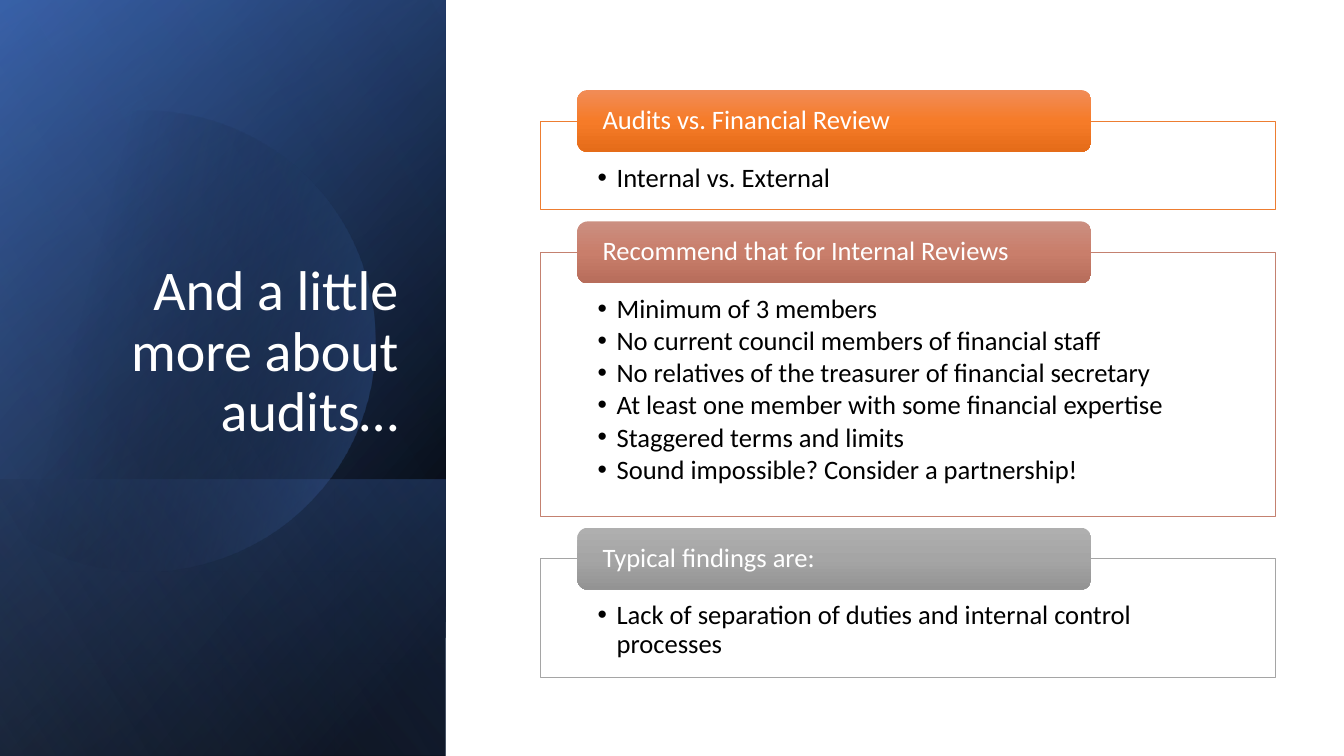
from lxml import etree
from pptx import Presentation
from pptx.dml.color import RGBColor
from pptx.enum.shapes import MSO_SHAPE
from pptx.enum.text import MSO_ANCHOR, MSO_AUTO_SIZE, PP_ALIGN
from pptx.oxml.ns import qn
from pptx.util import Cm, Pt

RECT, ROUND = MSO_SHAPE.RECTANGLE, MSO_SHAPE.ROUNDED_RECTANGLE
TOP, MIDDLE, BOTTOM = MSO_ANCHOR.TOP, MSO_ANCHOR.MIDDLE, MSO_ANCHOR.BOTTOM
LEFT, RIGHT = PP_ALIGN.LEFT, PP_ALIGN.RIGHT
NO_FIT = MSO_AUTO_SIZE.NONE

WHITE = RGBColor(0xFF, 0xFF, 0xFF)
BLACK = RGBColor(0x00, 0x00, 0x00)
NAVY = RGBColor(0x2F, 0x55, 0x97)
BLUE = RGBColor(0x44, 0x72, 0xC4)
SKY = RGBColor(0x8F, 0xAA, 0xDC)
ORANGE = RGBColor(0xED, 0x7D, 0x31)
ROSE = RGBColor(0xC4, 0x81, 0x70)
GRAY = RGBColor(0xA5, 0xA5, 0xA5)
ORANGES = RGBColor(0xF1, 0x8C, 0x57), RGBColor(0xF6, 0x7B, 0x28), RGBColor(0xE5, 0x6C, 0x19)
ROSES = RGBColor(0xCB, 0x8F, 0x81), RGBColor(0xC9, 0x7E, 0x6B), RGBColor(0xB7, 0x6D, 0x5B)
GRAYS = RGBColor(0xAF, 0xAF, 0xAF), GRAY, RGBColor(0x93, 0x93, 0x93)


def blend(shape, stops, angle):
    shape.shadow.inherit = False
    shape.line.fill.background()
    shape.fill.gradient()
    grad = shape._element.spPr.find(qn("a:gradFill"))
    marks = grad.find(qn("a:gsLst"))
    for mark in list(marks):
        marks.remove(mark)
    for place, color, alpha in stops:
        mark = etree.SubElement(marks, qn("a:gs"), pos=str(place * 1000))
        tone = etree.SubElement(mark, qn("a:srgbClr"), val=str(color))
        etree.SubElement(tone, qn("a:alpha"), val=str(alpha * 1000))
    grad.find(qn("a:lin")).set("ang", str(angle * 60000))


def write(shape, lines, size=19, color=BLACK, align=LEFT, anchor=TOP,
          inset=(0.25, 0.13, 0.25, 0.13), after=0, bullet=False):
    frame = shape.text_frame
    frame.word_wrap = True
    frame.auto_size = NO_FIT
    frame.vertical_anchor = anchor
    frame.margin_left, frame.margin_top, frame.margin_right, frame.margin_bottom = map(Cm, inset)
    for index, line in enumerate(lines):
        para = frame.add_paragraph() if index else frame.paragraphs[0]
        para.alignment = align
        para.line_spacing = 0.9
        para.space_after = Pt(after)
        run = para.add_run()
        run.text = line
        run.font.name = "Calibri"
        run.font.size = Pt(size)
        run.font.color.rgb = color
        if bullet:
            para.level = 1
            props = para._p.get_or_add_pPr()
            props.set("marL", str(Cm(0.48)))
            props.set("indent", str(Cm(-0.48)))
            etree.SubElement(props, qn("a:buFont"), typeface="Arial")
            etree.SubElement(props, qn("a:buChar"), char="•")


deck = Presentation()
deck.slide_width, deck.slide_height = Cm(33.87), Cm(19.05)
slide = deck.slides.add_slide(deck.slide_layouts[5])
shapes = slide.shapes

WIDE, TALL = 11.23, 19.05
panels = [
    (TALL, 50, [(8, BLACK, 100), (100, NAVY, 100)]),
    (TALL, 30, [(0, BLACK, 0), (99, BLUE, 46)]),
    (6.96, 130, [(2, BLUE, 29), (100, BLACK, 30)]),
    (TALL, 120, [(0, BLACK, 0), (99, SKY, 11)]),
]
for high, angle, stops in panels:
    left, top = (WIDE - high) / 2, TALL - (high + WIDE) / 2
    panel = shapes.add_shape(RECT, Cm(left), Cm(top), Cm(high), Cm(WIDE))
    panel.rotation = 90
    panel._element.spPr.find(qn("a:xfrm")).set("flipH", "1")
    blend(panel, stops, angle)

curves = [
    [(3.78, 2.79), (6.25, 2.84), (8.51, 4.5), (9.22, 6.99)],
    [(9.22, 6.99), (10.11, 10.08), (8.33, 13.28), (5.26, 14.17)],
    [(5.26, 14.17), (3.33, 14.73), (1.35, 14.25), (-0.08, 13.06)],
    [(-0.38, 12.78)],
    [(-0.38, 4.45)],
    [(0, 4.09), (0.58, 3.61), (1.27, 3.25), (2.03, 3.02)],
    [(2.03, 3.02), (2.62, 2.87), (3.2, 2.79), (3.78, 2.79)],
]
STEPS = 24
dots = []
for curve in curves:
    if len(curve) == 1:
        dots += curve
        continue
    for step in range(STEPS + 1):
        t = step / STEPS
        parts = (1 - t) ** 3, 3 * t * (1 - t) ** 2, 3 * t * t * (1 - t), t ** 3
        dots.append([sum(p * dot[axis] for p, dot in zip(parts, curve)) for axis in (0, 1)])
dots = [(Cm(x), Cm(y)) for x, y in dots]
pen = shapes.build_freeform(*dots[0])
pen.add_line_segments(dots[1:], close=True)
disc = pen.convert_to_shape()
blend(disc, [(29, BLACK, 0), (100, BLUE, 43)], 14)

title = shapes.title
title.left, title.top, title.width, title.height = Cm(1.63), Cm(4.67), Cm(8.66), Cm(6.65)
write(title, ["And a little more about audits…"], size=40, color=WHITE, align=RIGHT, anchor=BOTTOM)
for item in (panel, title):
    shapes._spTree.append(item._element)

cards = [
    ("Audits vs. Financial Review", ORANGE, ORANGES, 2.24, ["Internal vs. External"]),
    ("Recommend that for Internal Reviews", ROSE, ROSES, 6.65, [
        "Minimum of 3 members",
        "No current council members of financial staff",
        "No relatives of the treasurer of financial secretary",
        "At least one member with some financial expertise",
        "Staggered terms and limits",
        "Sound impossible? Consider a partnership!",
    ]),
    ("Typical findings are:", GRAY, GRAYS, 3,
     ["Lack of separation of duties and internal control processes"]),
]
GAP, TAB = 1.07, 1.56
top = 3.05
for head, edge, tones, high, lines in cards:
    box = shapes.add_shape(RECT, Cm(13.61), Cm(top), Cm(18.52), Cm(high))
    box.shadow.inherit = False
    box.fill.solid()
    box.fill.fore_color.rgb = WHITE
    box.line.color.rgb = edge
    box.line.width = Pt(0.5)
    write(box, lines, inset=(1.45, 1.09, 1.45, 0.38), after=2.4, bullet=True)

    tab = shapes.add_shape(ROUND, Cm(14.55), Cm(top - TAB / 2), Cm(12.95), Cm(TAB))
    blend(tab, [(place, tone, 100) for place, tone in zip((0, 50, 100), tones)], 90)
    write(tab, [head], color=WHITE, anchor=MIDDLE, inset=(0.56, 0, 0.56, 0))
    top += high + GAP

deck.save("out.pptx")
